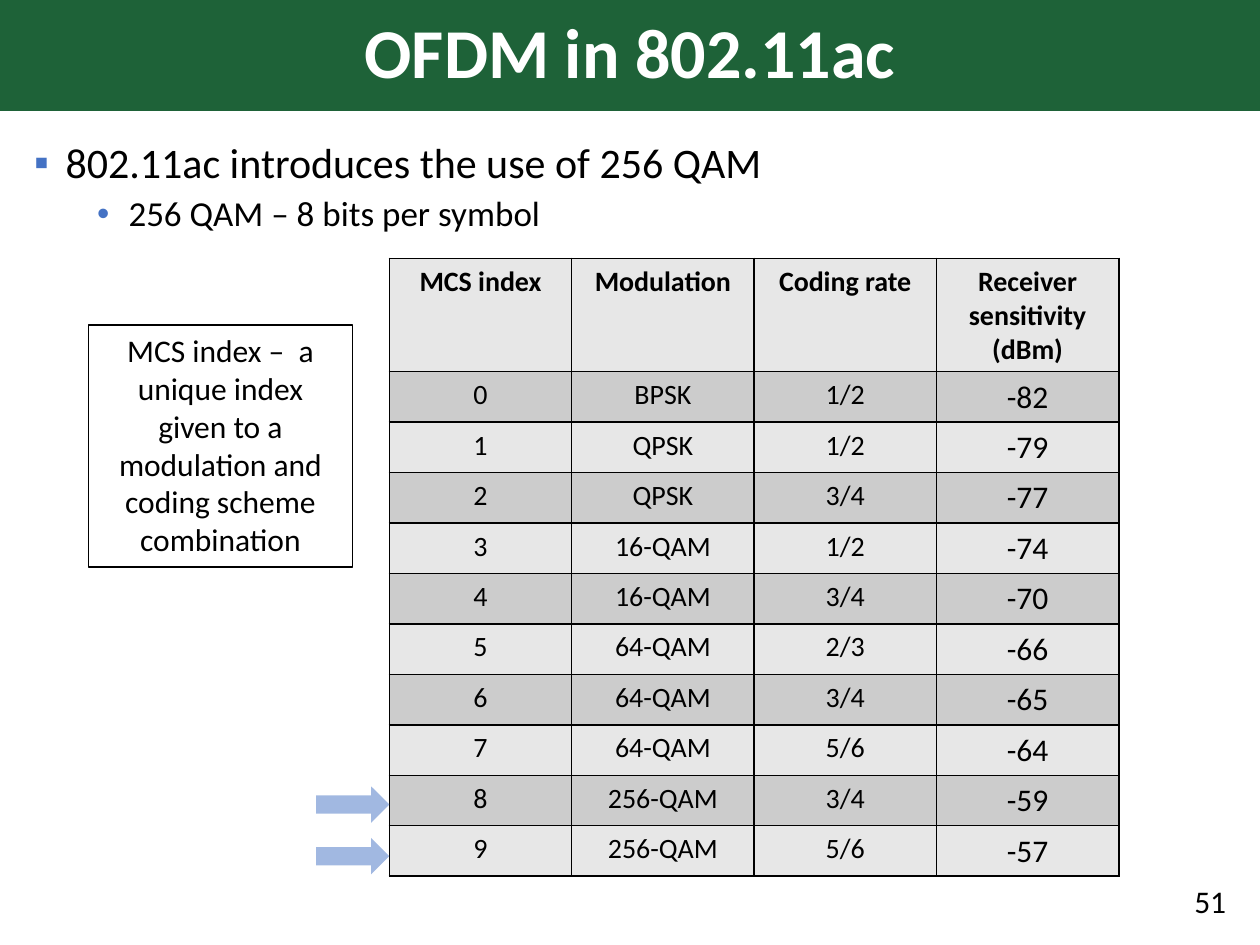
from lxml.etree import SubElement
from pptx import Presentation
from pptx.dml.color import RGBColor
from pptx.enum.shapes import MSO_SHAPE
from pptx.enum.text import MSO_ANCHOR, MSO_AUTO_SIZE, PP_ALIGN
from pptx.oxml.ns import qn
from pptx.util import Inches, Pt

TITLE = "OFDM in 802.11ac"
BULLETS = [
    ("802.11ac introduces the use of 256 QAM", 24, "▪", 0.25, 10),
    ("256 QAM – 8 bits per symbol", 20, "•", 0.75, 5),
]
NOTE = "MCS index –  a unique index given to a modulation and coding scheme combination"
PAGE = "51"
HEADER = ("MCS index", "Modulation", "Coding rate", "Receiver sensitivity (dBm)")
SCHEMES = [
    ("BPSK", "1/2", "-82"),
    ("QPSK", "1/2", "-79"),
    ("QPSK", "3/4", "-77"),
    ("16-QAM", "1/2", "-74"),
    ("16-QAM", "3/4", "-70"),
    ("64-QAM", "2/3", "-66"),
    ("64-QAM", "3/4", "-65"),
    ("64-QAM", "5/6", "-64"),
    ("256-QAM", "3/4", "-59"),
    ("256-QAM", "5/6", "-57"),
]
ARROW_TOPS = (6.24, 6.65)
COLORS = {"green": "1E6238", "blue": "4472C4", "black": "000000", "white": "FFFFFF",
          "light": "E7E7E7", "dark": "CCCCCC"}


def rgb(name):
    return RGBColor.from_string(COLORS[name])


def box(*lengths):
    return [Inches(v) for v in lengths]


def place(sp, *lengths):
    sp.left, sp.top, sp.width, sp.height = box(*lengths)


def style(p, size, color="black", bold=False, align=None):
    p.alignment = align
    for r in p.runs:
        r.font.name = "Calibri"
        r.font.size = Pt(size)
        r.font.bold = bold
        r.font.color.rgb = rgb(color)


def add_bullet(p, char, indent):
    pPr = p._p.get_or_add_pPr()
    pPr.set("marL", str(Inches(indent)))
    pPr.set("indent", str(Inches(-0.25)))
    clr = SubElement(pPr, qn("a:buClr"))
    SubElement(clr, qn("a:srgbClr"), val=COLORS["blue"])
    SubElement(pPr, qn("a:buFont"), typeface="Arial")
    SubElement(pPr, qn("a:buChar"), char=char)


def fill_cell(cell, text, size, color, bold):
    cell.text = text
    style(cell.text_frame.paragraphs[0], size, bold=bold, align=PP_ALIGN.CENTER)
    tcPr = cell._tc.get_or_add_tcPr()
    for side in ("lnL", "lnR", "lnT", "lnB"):
        ln = SubElement(tcPr, qn(f"a:{side}"), w=str(Pt(1)))
        fill = SubElement(ln, qn("a:solidFill"))
        SubElement(fill, qn("a:srgbClr"), val=COLORS["black"])
    cell.fill.solid()
    cell.fill.fore_color.rgb = rgb(color)


prs = Presentation()
prs.slide_width, prs.slide_height = box(10, 7.5)
s = prs.slides.add_slide(prs.slide_layouts[1])

title = s.shapes.title
place(title, 0, 0, 10, 0.88)
title.fill.solid()
title.fill.fore_color.rgb = rgb("green")
tf = title.text_frame
tf.text = TITLE
tf.auto_size = MSO_AUTO_SIZE.NONE
tf.vertical_anchor = MSO_ANCHOR.MIDDLE
tf.paragraphs[0].line_spacing = 0.9
style(tf.paragraphs[0], 40, "white", True, PP_ALIGN.CENTER)

body = s.placeholders[1]
place(body, 0.17, 1.08, 9.65, 6.27)
tf = body.text_frame
tf.text = "\n".join(b[0] for b in BULLETS)
tf.auto_size = MSO_AUTO_SIZE.NONE
for level, (p, (_, size, char, indent, before)) in enumerate(zip(tf.paragraphs, BULLETS)):
    p.level = level
    p.line_spacing = 0.9
    p.space_before = Pt(before)
    style(p, size)
    add_bullet(p, char, indent)

number = s.shapes.add_textbox(*box(7.58, 6.95, 2.25, 0.4))
tf = number.text_frame
tf.word_wrap = True
tf.text = PAGE
tf.vertical_anchor = MSO_ANCHOR.MIDDLE
style(tf.paragraphs[0], 18, align=PP_ALIGN.RIGHT)

rows = [HEADER] + [(str(i), *scheme) for i, scheme in enumerate(SCHEMES)]
table = s.shapes.add_table(len(rows), len(HEADER), *box(3.09, 2.05, 5.79, 4.9)).table
for col in table.columns:
    col.width = Inches(5.79 / len(HEADER))
for i, row in enumerate(rows):
    table.rows[i].height = Inches(0.38 if i else 0.62)
    for j, text in enumerate(row):
        size = 18 if i and j == len(HEADER) - 1 else 16
        fill_cell(table.cell(i, j), text, size, "dark" if i % 2 else "light", i == 0)

for top in ARROW_TOPS:
    arrow = s.shapes.add_shape(MSO_SHAPE.RIGHT_ARROW, *box(2.51, top, 0.58, 0.29))
    arrow.shadow.inherit = False
    arrow.line.fill.background()
    arrow.fill.solid()
    arrow.fill.fore_color.rgb = rgb("blue")
    clr = arrow._element.spPr.find(qn("a:solidFill"))[0]
    SubElement(clr, qn("a:alpha"), val="50000")

note = s.shapes.add_shape(MSO_SHAPE.RECTANGLE, *box(0.7, 2.58, 2.1, 1.92))
note.shadow.inherit = False
note.fill.background()
note.line.color.rgb = rgb("black")
note.line.width = Pt(0.75)
tf = note.text_frame
tf.word_wrap = True
tf.text = NOTE
tf.auto_size = MSO_AUTO_SIZE.SHAPE_TO_FIT_TEXT
tf.vertical_anchor = MSO_ANCHOR.TOP
style(tf.paragraphs[0], 18, align=PP_ALIGN.CENTER)

prs.save("out.pptx")
